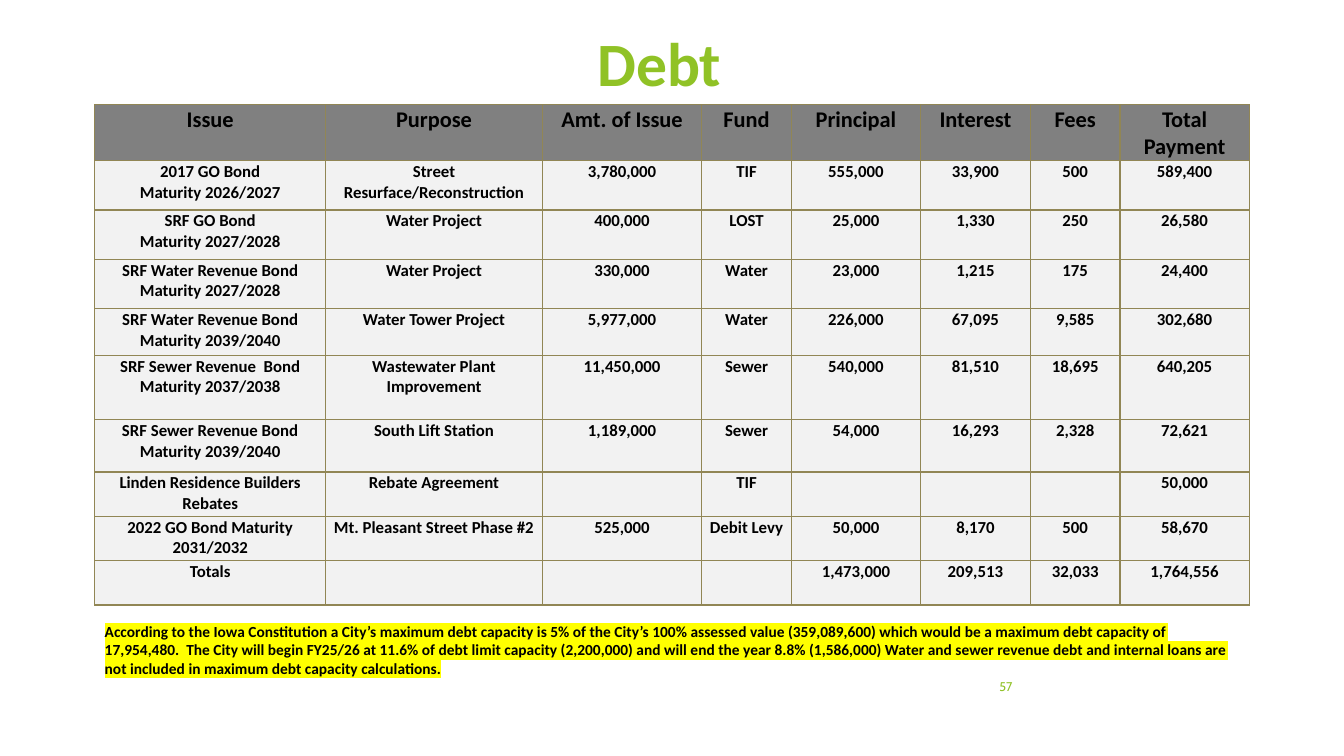
from lxml.etree import SubElement
from pptx import Presentation
from pptx.dml.color import RGBColor
from pptx.enum.text import MSO_ANCHOR as Anchor, MSO_AUTO_SIZE as AutoSize, PP_ALIGN as Align
from pptx.oxml.ns import qn
from pptx.util import Inches, Pt

GREEN, BLACK, GRAY, LIGHT, BORDER, YELLOW = (
    "90C226", "000000", "808080", "F2F2F2", "918655", "FFFF00")

HEADERS = ["Issue", "Purpose", "Amt. of Issue", "Fund",
           "Principal", "Interest", "Fees", "Total Payment"]
DEBTS = [
    ["2017 GO Bond\nMaturity 2026/2027", "Street Resurface/Reconstruction",
     "3,780,000", "TIF", "555,000", "33,900", "500", "589,400"],
    ["SRF GO Bond\nMaturity 2027/2028", "Water Project",
     "400,000", "LOST", "25,000", "1,330", "250", "26,580"],
    ["SRF Water Revenue Bond\nMaturity 2027/2028", "Water Project",
     "330,000", "Water", "23,000", "1,215", "175", "24,400"],
    ["SRF Water Revenue Bond\nMaturity 2039/2040", "Water Tower Project",
     "5,977,000", "Water", "226,000", "67,095", "9,585", "302,680"],
    ["SRF Sewer Revenue  Bond\nMaturity 2037/2038", "Wastewater Plant Improvement",
     "11,450,000", "Sewer", "540,000", "81,510", "18,695", "640,205"],
    ["SRF Sewer Revenue Bond\nMaturity 2039/2040", "South Lift Station",
     "1,189,000", "Sewer", "54,000", "16,293", "2,328", "72,621"],
    ["Linden Residence Builders Rebates", "Rebate Agreement",
     "", "TIF", "", "", "", "50,000"],
    ["2022 GO Bond Maturity 2031/2032", "Mt. Pleasant Street Phase #2",
     "525,000", "Debit Levy", "50,000", "8,170", "500", "58,670"],
    ["Totals", "", "", "", "1,473,000", "209,513", "32,033", "1,764,556"],
]
COLUMN_WIDTHS = [2.29, 2.15, 1.58, 0.89, 1.28, 1.09, 0.89, 1.28]
ROW_HEIGHTS = [0.52, 0.49, 0.49, 0.49, 0.46, 0.64, 0.52, 0.44, 0.44, 0.44]
NOTE = (
    "According to the Iowa Constitution a City’s maximum debt capacity is 5% of the "
    "City’s 100% assessed value (359,089,600) which would be a maximum debt capacity of "
    "17,954,480.  The City will begin FY25/26 at 11.6% of debt limit capacity (2,200,000) "
    "and will end the year 8.8% (1,586,000) Water and sewer revenue debt and internal "
    "loans are not included in maximum debt capacity calculations.")


def color(hex_text):
    return RGBColor.from_string(hex_text)


def write(frame, text, size=12, font="Calibri", fill=BLACK, bold=True,
          align=Align.CENTER, highlight=None):
    """Write each line of text as a formatted paragraph."""
    for index, line in enumerate(text.split("\n")):
        paragraph = frame.add_paragraph() if index else frame.paragraphs[0]
        paragraph.alignment = align
        paragraph.font.size = Pt(size)
        if not line:
            continue
        run = paragraph.add_run()
        run.text = line
        run.font.size, run.font.name, run.font.bold = Pt(size), font, bold
        run.font.color.rgb = color(fill)
        if highlight:
            properties = run._r.get_or_add_rPr()
            mark = SubElement(properties, qn("a:highlight"))
            SubElement(mark, qn("a:srgbClr"), val=highlight)
            properties.find(qn("a:solidFill")).addnext(mark)


def add_borders(cell, line_color, width=1):
    properties = cell._tc.get_or_add_tcPr()
    for index, side in enumerate(("lnL", "lnR", "lnT", "lnB")):
        line = SubElement(properties, qn(f"a:{side}"), w=str(Pt(width)))
        fill = SubElement(line, qn("a:solidFill"))
        SubElement(fill, qn("a:srgbClr"), val=line_color)
        properties.insert(index, line)


class DebtSlide:
    def __init__(self, presentation):
        # Layout 5 has only a title
        self.slide = presentation.slides.add_slide(presentation.slide_layouts[5])

    def title(self, text, left, top, width, height):
        shape = self.slide.shapes.title
        shape.left, shape.top = Inches(left), Inches(top)
        shape.width, shape.height = Inches(width), Inches(height)
        frame = shape.text_frame
        frame.auto_size = AutoSize.NONE
        frame.vertical_anchor = Anchor.TOP
        frame.margin_top = Inches(0.06)
        frame.margin_bottom = 0
        write(frame, text, size=44, fill=GREEN)

    def text(self, text, left, top, width, height, anchor=Anchor.TOP, **style):
        box = self.slide.shapes.add_textbox(
            Inches(left), Inches(top), Inches(width), Inches(height))
        box.text_frame.word_wrap = True
        box.text_frame.vertical_anchor = anchor
        write(box.text_frame, text, **style)

    def table(self, rows, left, top, widths, heights):
        table = self.slide.shapes.add_table(
            len(rows), len(widths), Inches(left), Inches(top),
            Inches(sum(widths)), Inches(sum(heights))).table
        table.horz_banding = table.first_row = False
        for column, width in zip(table.columns, widths):
            column.width = Inches(width)
        for row_index, (row, height, texts) in enumerate(zip(table.rows, heights, rows)):
            row.height = Inches(height)
            header = row_index == 0
            for cell, text in zip(row.cells, texts):
                cell.margin_left = cell.margin_right = cell.margin_top = Inches(0.01)
                cell.margin_bottom = 0
                cell.fill.solid()
                cell.fill.fore_color.rgb = color(GRAY if header else LIGHT)
                add_borders(cell, BORDER)
                write(cell.text_frame, text, size=16 if header else 12)


def main():
    presentation = Presentation()
    presentation.slide_width, presentation.slide_height = Inches(13.33), Inches(7.5)
    page = DebtSlide(presentation)

    # Title
    page.title("Debt", 2.29, 0.19, 8.5, 0.72)

    # Debt table
    page.table([HEADERS] + DEBTS, 0.94, 1.04, COLUMN_WIDTHS, ROW_HEIGHTS)

    # Page number and debt capacity note
    page.text("57", 9.39, 6.61, 0.75, 0.4, anchor=Anchor.MIDDLE, size=9,
              font="Cabin", fill=GREEN, bold=False, align=Align.RIGHT)
    page.text(NOTE, 0.94, 6.12, 11.45, 0.66, size=11, align=Align.LEFT,
              highlight=YELLOW)

    presentation.save("out.pptx")


if __name__ == "__main__":
    main()
